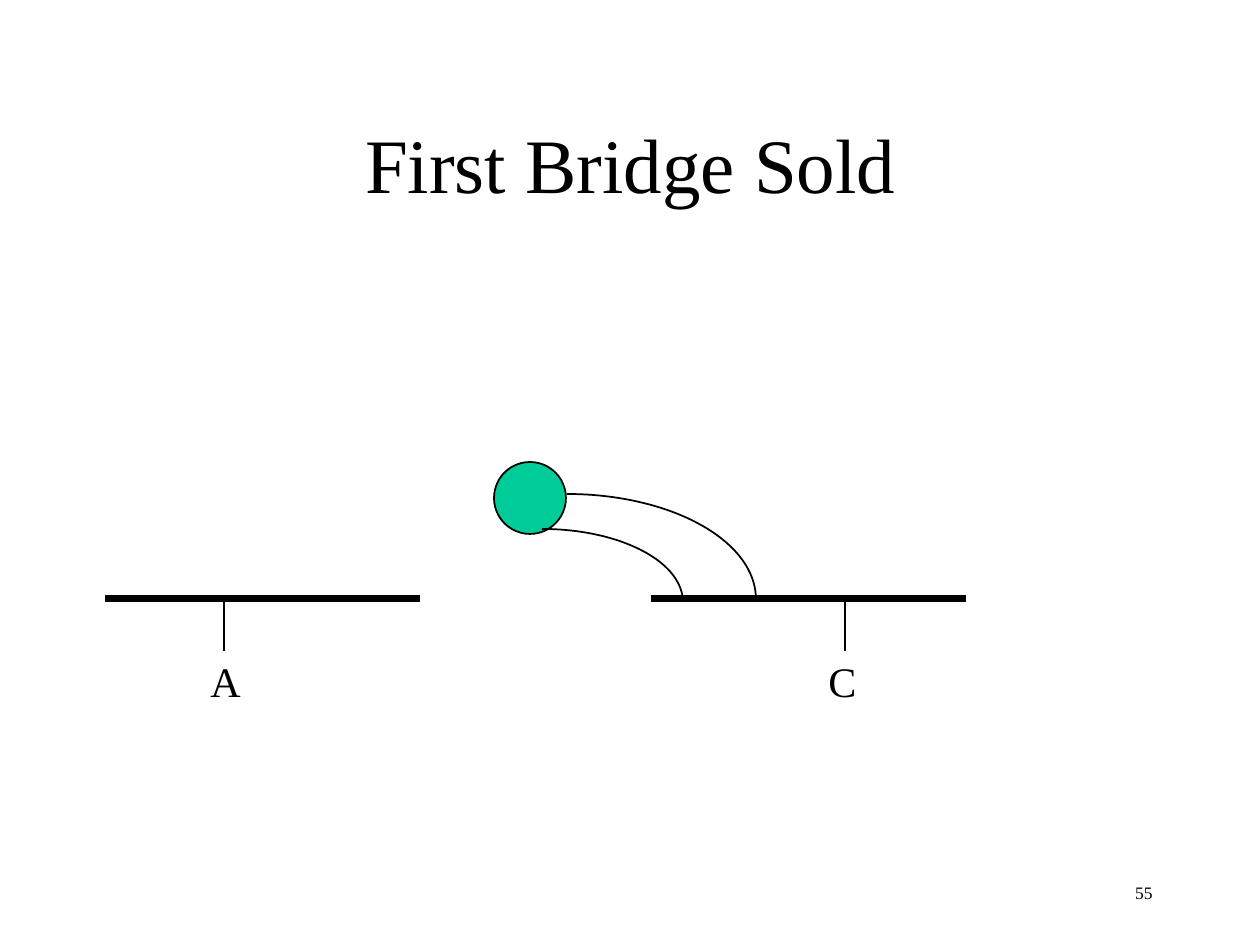
import math

from lxml import etree
from pptx import Presentation
from pptx import util as u
from pptx.dml.color import RGBColor
from pptx.enum import shapes, text
from pptx.oxml.ns import qn

# Content, lengths in px
PX = 914400 / 126
SIZE = (1260, 945)
FONT = "Times New Roman"
COLORS = {"ink": "000000", "ball": "00CC99"}
TITLE = ("First Bridge Sold", (95, 84, 1071, 158))
NUMBER = ("55", (892, 861, 273, 63))
BANK_Y, BANK_LENGTH, POST_BOTTOM = 599, 315, 651
BANKS = [  # label, label left and width, bank left, post x
    ("A", 198, 55, 105, 224),
    ("C", 816, 53, 651, 845),
]
BALL = (494, 462, 72, 72)
ARCS = [  # centre x, centre y, radius x, radius y
    (567, 599, 189, 105),
    (542, 602, 141, 73),
]
ARC_STEPS = 45


def px(*values):
    return [u.Emu(round(v * PX)) for v in values]


def color(name):
    return RGBColor.from_string(COLORS[name])


def write(shape, content, size, align=text.PP_ALIGN.LEFT,
          anchor=text.MSO_ANCHOR.TOP, wrap=False, fit=text.MSO_AUTO_SIZE.NONE):
    tf = shape.text_frame
    tf.word_wrap, tf.auto_size, tf.vertical_anchor = wrap, fit, anchor
    p = tf.paragraphs[0]
    p.alignment = align
    r = p.add_run()
    r.text = content
    r.font.name, r.font.size = FONT, u.Pt(size)
    r.font.color.rgb = color("ink")


def outline(shape, width):
    shape.line.color.rgb = color("ink")
    shape.line.width = u.Pt(width)


def add_line(s, x1, y1, x2, y2, width):
    line = s.shapes.add_connector(shapes.MSO_CONNECTOR.STRAIGHT, *px(x1, y1, x2, y2))
    outline(line, width)
    etree.SubElement(line._element.spPr, qn("a:effectLst"))


def add_arc(s, cx, cy, rx, ry):
    # Quarter ellipse, from the top to the right end
    angles = [math.pi / 2 * i / ARC_STEPS for i in range(ARC_STEPS + 1)]
    points = [px(cx + rx * math.sin(a), cy - ry * math.cos(a)) for a in angles]
    builder = s.shapes.build_freeform(*points[0])
    builder.add_line_segments(points[1:], close=False)
    arc = builder.convert_to_shape()
    arc.fill.background()
    arc.shadow.inherit = False
    outline(arc, 1)


prs = Presentation()
prs.slide_width, prs.slide_height = px(*SIZE)
s = prs.slides.add_slide(prs.slide_layouts[5])

# Title and slide number
content, box = TITLE
title = s.shapes.title
title.left, title.top, title.width, title.height = px(*box)
write(title, content, 44, text.PP_ALIGN.CENTER, text.MSO_ANCHOR.MIDDLE, wrap=True)
content, box = NUMBER
write(s.shapes.add_textbox(*px(*box)), content, 10, text.PP_ALIGN.RIGHT,
      text.MSO_ANCHOR.MIDDLE)

# Banks with posts and labels
for label, label_x, label_w, bank_x, post_x in BANKS:
    add_line(s, bank_x, BANK_Y, bank_x + BANK_LENGTH, BANK_Y, 4)
    add_line(s, post_x, POST_BOTTOM, post_x, BANK_Y, 1)
    write(s.shapes.add_textbox(*px(label_x, 649, label_w, 63)), label, 24,
          fit=text.MSO_AUTO_SIZE.SHAPE_TO_FIT_TEXT)

# Ball and the arcs to the right bank
ball = s.shapes.add_shape(shapes.MSO_SHAPE.OVAL, *px(*BALL))
ball.shadow.inherit = False
ball.fill.solid()
ball.fill.fore_color.rgb = color("ball")
outline(ball, 1)
for arc in ARCS:
    add_arc(s, *arc)

prs.save("out.pptx")
